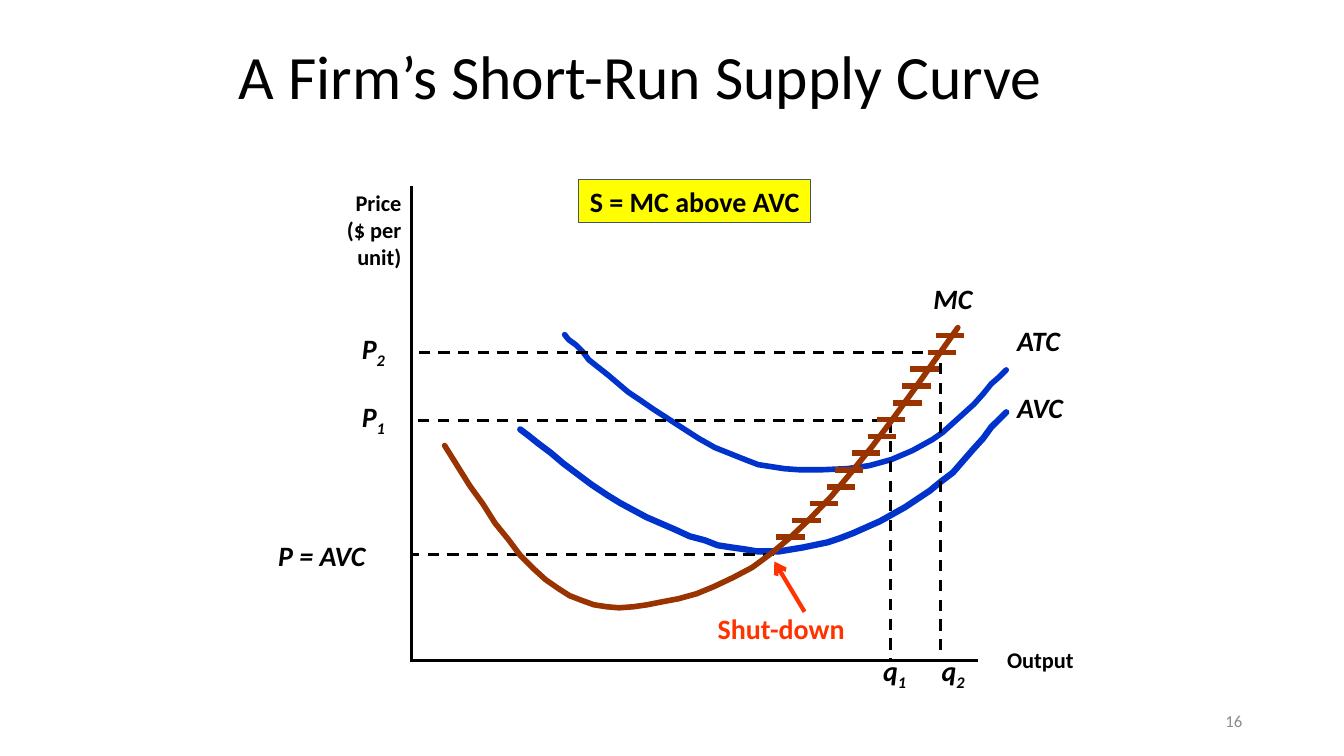
"""Build a slide on the short-run supply curve of a firm."""
from lxml import etree
from pptx import Presentation
from pptx.dml.color import RGBColor
from pptx.enum.dml import MSO_LINE
from pptx.enum.shapes import MSO_CONNECTOR, MSO_SHAPE
from pptx.enum.text import MSO_ANCHOR, MSO_AUTO_SIZE, PP_ALIGN
from pptx.oxml.ns import qn
from pptx.util import Cm, Pt

LEFT, MID, RIGHT = PP_ALIGN.LEFT, PP_ALIGN.CENTER, PP_ALIGN.RIGHT
TOP, CORE, BASE = MSO_ANCHOR.TOP, MSO_ANCHOR.MIDDLE, MSO_ANCHOR.BOTTOM
FIXED, GROW = MSO_AUTO_SIZE.NONE, MSO_AUTO_SIZE.SHAPE_TO_FIT_TEXT
STRAIGHT, RECT, DASH = MSO_CONNECTOR.STRAIGHT, MSO_SHAPE.RECTANGLE, MSO_LINE.DASH

FONT = "Calibri"
COLORS = {"ink": "000000", "blue": "0033CC", "brown": "993300", "red": "FF3300",
          "yellow": "FFFF00", "slate": "44546A", "gray": "8C8C8C"}

TITLE = ("A Firm’s Short-Run Supply Curve", (2.27, 0.32, 8.73, 0.85))
RULE = ("S = MC above AVC", (5.74, 1.78, 2.3, 0.43))
STOP = ("Shut-down", (7.02, 6.02, 1.48, 0.44))
PAGE = ("16", (9.42, 6.95, 3, 0.4))
AXES = [("Price\n($ per\nunit)", (3.33, 1.83, 0.75, 0.91), RIGHT),
        ("Output", (9.89, 6.36, 0.87, 0.37), LEFT)]
MARKS = [("MC", "", (9.16, 2.74, 0.59, 0.43)),
         ("AVC", "", (9.99, 3.83, 0.66, 0.43)),
         ("ATC", "", (9.99, 3.16, 0.63, 0.43)),
         ("P = AVC", "", (2.66, 5.29, 1.07, 0.43)),
         ("P", "1", (3.49, 3.91, 0.44, 0.43)),
         ("P", "2", (3.49, 3.24, 0.44, 0.43)),
         ("q", "1", (8.66, 6.43, 0.44, 0.43)),
         ("q", "2", (9.24, 6.43, 0.44, 0.43))]

FRAME = [(4.08, 1.85, 4.08, 6.57), (4.08, 6.55, 9.7, 6.55)]
GUIDES = [(7.68, 5.5, 4.07, 5.5), (8.76, 4.17, 4.07, 4.17), (9.35, 3.5, 4.07, 3.5),
          (8.83, 4.18, 8.83, 6.57), (9.33, 3.6, 9.33, 6.57)]
ARROW = (7.68, 5.57, 7.98, 6.07)
TICKS = [9.28, 9.2, 9.03, 8.95, 8.86, 8.7, 8.61, 8.45, 8.28, 8.2, 8.03, 7.86, 7.7]
TICK_TOP, TICK_END, TICK_W = 3.33, 5.33, 0.28

AVC = [(5.16, 4.26), (5.24, 4.32), (5.34, 4.4), (5.46, 4.49), (5.59, 4.6),
       (5.87, 4.81), (6.02, 4.91), (6.15, 4.99), (6.41, 5.13), (6.71, 5.26),
       (6.84, 5.32), (6.99, 5.36), (7.12, 5.41), (7.25, 5.43), (7.39, 5.45),
       (7.51, 5.47), (7.73, 5.47), (7.97, 5.43), (8.21, 5.38), (8.33, 5.34),
       (8.46, 5.29), (8.73, 5.17), (8.98, 5.03), (9.22, 4.87), (9.33, 4.78),
       (9.45, 4.69), (9.65, 4.46), (9.75, 4.35), (9.83, 4.24), (9.91, 4.16),
       (9.98, 4.09)]
ATC = [(5.6, 3.32), (5.64, 3.37), (5.71, 3.42), (5.78, 3.49), (5.84, 3.57),
       (6.03, 3.72), (6.23, 3.89), (6.35, 3.97), (6.48, 4.06), (6.79, 4.26),
       (6.93, 4.35), (7.09, 4.44), (7.24, 4.5), (7.39, 4.56), (7.52, 4.61),
       (7.65, 4.63), (7.78, 4.65), (7.92, 4.66), (8.16, 4.66), (8.4, 4.65),
       (8.62, 4.62), (8.84, 4.56), (9.05, 4.47), (9.25, 4.36), (9.35, 4.29),
       (9.45, 4.2), (9.55, 4.11), (9.66, 4.01), (9.75, 3.91), (9.83, 3.81),
       (9.91, 3.74), (9.98, 3.67)]
MC = [(4.41, 4.42), (4.66, 4.82), (4.79, 5), (4.91, 5.19), (5.04, 5.35),
      (5.16, 5.51), (5.29, 5.64), (5.41, 5.75), (5.54, 5.84), (5.65, 5.91),
      (5.78, 5.96), (5.89, 6), (6.02, 6.02), (6.14, 6.03), (6.28, 6.02),
      (6.42, 6), (6.57, 5.97), (6.73, 5.94), (6.91, 5.89), (7.08, 5.82),
      (7.27, 5.73), (7.46, 5.63), (7.65, 5.49), (7.84, 5.33), (8.03, 5.15),
      (8.24, 4.93), (8.44, 4.69), (8.65, 4.43), (8.86, 4.15), (9.07, 3.86),
      (9.5, 3.25)]


def scale(nums):
    """Turn inches into lengths."""
    return [Cm(num * 2.54) for num in nums]


def tint(name):
    """Look up a colour."""
    return RGBColor.from_string(COLORS[name])


def assign(item, form):
    """Set each attribute in a dict of format values."""
    for key, value in form.items():
        setattr(item, key, value)


def stroke(shape, color, width):
    """Set the outline and return its element."""
    shape.line.color.rgb = tint(color)
    shape.line.width = Pt(width)
    return shape.element.spPr.find(qn("a:ln"))


def write(shape, text, size, color="ink", align=LEFT, anchor=TOP, grow=GROW,
          wrap=False, bold=True, italic=False, sub="", space=None):
    """Fill a shape with formatted text."""
    frame = shape.text_frame
    assign(frame, {"text": text, "word_wrap": wrap, "auto_size": grow,
                   "vertical_anchor": anchor})
    if sub:
        low = frame.paragraphs[0].add_run()
        low.text = sub
        low.font.element.set("baseline", "-25000") if hasattr(low.font, "element") \
            else low._r.get_or_add_rPr().set("baseline", "-25000")
    for para in frame.paragraphs:
        assign(para, {"alignment": align, "line_spacing": space})
        for run in para.runs:
            assign(run.font, {"name": FONT, "size": Pt(size), "bold": bold,
                              "italic": italic})
            run.font.color.rgb = tint(color)


def label(shapes, text, box, size, **form):
    """Add a text box."""
    write(shapes.add_textbox(*scale(box)), text, size, **form)


def link(shapes, ends, color, width, dash=None):
    """Add a straight line and return its outline element."""
    line = shapes.add_connector(STRAIGHT, *scale(ends))
    edge = stroke(line, color, width)
    line.line.dash_style = dash
    etree.SubElement(line.element.spPr, qn("a:effectLst"))
    return edge


def curve(shapes, points, color, width):
    """Add an open curve with round ends."""
    dots = [scale(point) for point in points]
    pen = shapes.build_freeform(*dots[0], scale=1.0)
    pen.add_line_segments(dots[1:], close=False)
    shape = pen.convert_to_shape()
    shape.fill.background()
    shape.shadow.inherit = False
    edge = stroke(shape, color, width)
    edge.set("cap", "rnd")
    etree.SubElement(edge, qn("a:round"))


def main():
    """Draw the slide and save it."""
    deck = Presentation()
    deck.slide_width, deck.slide_height = scale((13.33, 7.5))
    slide = deck.slides.add_slide(deck.slide_layouts[5])
    shapes = slide.shapes

    text, box = TITLE
    head = shapes.title
    assign(head, dict(zip(("left", "top", "width", "height"), scale(box))))
    write(head, text, 44, anchor=BASE, grow=FIXED, wrap=True, bold=False, space=0.9)

    for ends in FRAME:
        link(shapes, ends, "ink", 2)
    for text, box, align in AXES:
        label(shapes, text, box, 16, align=align)
    curve(shapes, AVC, "blue", 4.5)
    curve(shapes, ATC, "blue", 4)
    for ends in GUIDES:
        link(shapes, ends, "ink", 2, DASH)
    for text, sub, box in MARKS:
        label(shapes, text, box, 20, italic=True, sub=sub)

    text, box = RULE
    badge = shapes.add_shape(RECT, *scale(box))
    badge.shadow.inherit = False
    badge.fill.solid()
    badge.fill.fore_color.rgb = tint("yellow")
    stroke(badge, "slate", 1)
    write(badge, text, 20, align=MID)

    ticks = shapes.add_group_shape().shapes
    step = (TICK_END - TICK_TOP) / (len(TICKS) - 1)
    for row, left in enumerate(TICKS):
        y = TICK_TOP + row * step
        link(ticks, (left, y, left + TICK_W, y), "brown", 4)
    curve(shapes, MC, "brown", 4)

    label(shapes, *STOP, 20, color="red")
    edge = link(shapes, ARROW, "red", 3)
    etree.SubElement(edge, qn("a:headEnd"), type="arrow")
    label(shapes, *PAGE, 12, color="gray", align=RIGHT, anchor=CORE, grow=FIXED,
          wrap=True, bold=False)
    deck.save("out.pptx")


if __name__ == "__main__":
    main()
